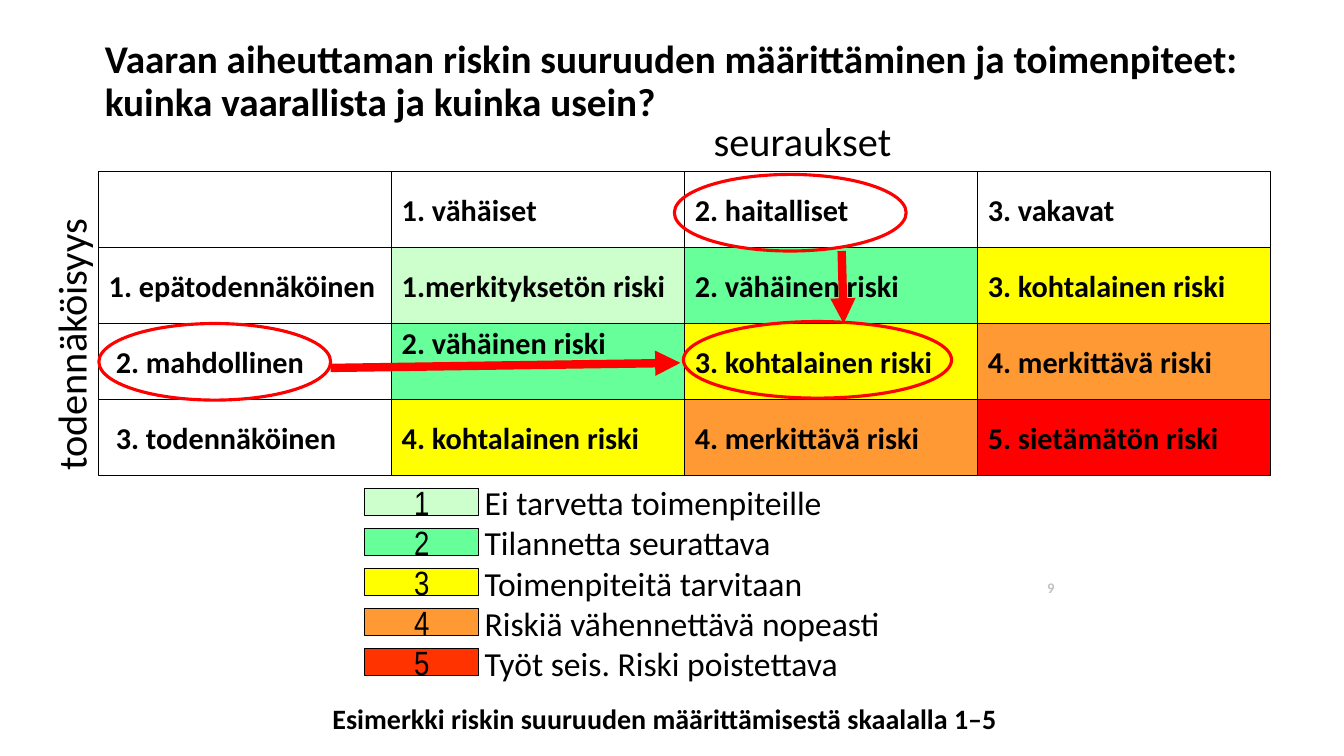
from typing import NamedTuple

from lxml import etree
from pptx import Presentation
from pptx import util as u
from pptx.dml import color
from pptx.enum import shapes, text
from pptx.oxml import ns

BLACK, WHITE, RED = "000000", "FFFFFF", "FF0000"
PALE_GREEN, GREEN, YELLOW, ORANGE = "CCFFCC", "66FF99", "FFFF00", "FF9933"
LEFT, CENTER, RIGHT = text.PP_ALIGN.LEFT, text.PP_ALIGN.CENTER, text.PP_ALIGN.RIGHT
TOP, MIDDLE = text.MSO_ANCHOR.TOP, text.MSO_ANCHOR.MIDDLE


class Box(NamedTuple):
    left: float
    top: float
    width: float
    height: float


class Style(NamedTuple):
    size: float
    bold: bool = False
    align: text.PP_ALIGN = LEFT
    color: str = BLACK
    font: str = "Calibri"


class Cell(NamedTuple):
    label: str
    fill: str = WHITE
    indent: float = 0
    lift: float = 0


class Action(NamedTuple):
    fill: str
    label: str


class Label(NamedTuple):
    box: Box
    lines: list[str]
    style: Style
    rotation: float = 0
    wrap: bool = False
    anchor: text.MSO_ANCHOR = TOP


class Arrow(NamedTuple):
    start: tuple[float, float]
    end: tuple[float, float]


TITLE = ("Vaaran aiheuttaman riskin suuruuden määrittäminen ja toimenpiteet: "
         "kuinka vaarallista ja kuinka usein?")
GRID = Box(70.6, 122.4, 209.3, 54.3)  # first cell
MATRIX = [
    [Cell(""), Cell("1. vähäiset"), Cell("2. haitalliset"), Cell("3. vakavat")],
    [Cell("1. epätodennäköinen"), Cell("1.merkityksetön riski", PALE_GREEN),
     Cell("2. vähäinen riski", GREEN), Cell("3. kohtalainen riski", YELLOW)],
    [Cell("2. mahdollinen", indent=4.9), Cell("2. vähäinen riski", GREEN, lift=26.4),
     Cell("3. kohtalainen riski", YELLOW), Cell("4. merkittävä riski", ORANGE)],
    [Cell("3. todennäköinen", indent=4.9), Cell("4. kohtalainen riski", YELLOW),
     Cell("4. merkittävä riski", ORANGE), Cell("5. sietämätön riski", RED)],
]
KEY = Box(260.6, 348.8, 81.4, 19.4)  # first key box
KEY_PITCH = 28.6
ACTIONS = [
    Action(PALE_GREEN, "Ei tarvetta toimenpiteille"),
    Action(GREEN, "Tilannetta seurattava"),
    Action(YELLOW, "Toimenpiteitä tarvitaan"),
    Action(ORANGE, "Riskiä vähennettävä nopeasti"),
    Action("FF3300", "Työt seis. Riski poistettava"),
]
LABELS = [
    Label(Box(721.4, 408.2, 38.9, 23.8), ["9"],
          Style(10.5, True, RIGHT, "C1C1C6"), wrap=True, anchor=MIDDLE),
    Label(Box(502.6, 79.2, 142.6, 42.5), ["seuraukset"], Style(28.8)),
    Label(Box(-47.5, 223.9, 196.6, 42.5), ["todennäköisyys"], Style(28.8), rotation=270),
    Label(Box(339.1, 340.6, 300.2, 152.6), [action.label for action in ACTIONS], Style(24)),
    Label(Box(228.2, 497.5, 493.2, 31.7),
          ["Esimerkki riskin suuruuden määrittämisestä skaalalla 1–5"],
          Style(20, True, CENTER), wrap=True),
]
RINGS = [Box(481.7, 124.6, 165.6, 54.7), Box(488.2, 229.7, 191.5, 54.7),
         Box(70.6, 231.1, 165.6, 54.7)]
ARROWS = [Arrow((236.2, 262.8), (486, 259.2)), Arrow((601.2, 179.3), (602.6, 231.1))]
CELL_STYLE = Style(21.6, True)
KEY_STYLE = Style(24, align=CENTER, font="Arial Narrow")


def rgb(code: str) -> color.RGBColor:
    return color.RGBColor.from_string(code)


def points(values) -> list[u.Pt]:
    return [u.Pt(value) for value in values]


def write(frame, lines: list[str], style: Style) -> None:
    for index, line in enumerate(lines):
        paragraph = frame.add_paragraph() if index else frame.paragraphs[0]
        paragraph.alignment = style.align
        run = paragraph.add_run()
        run.text = line
        run.font.size = u.Pt(style.size)
        run.font.bold = style.bold
        run.font.name = style.font
        run.font.color.rgb = rgb(style.color)


def add_title(slide) -> None:
    title = slide.shapes.title
    title.left, title.top, title.width, title.height = points((67.7, 6.5, 828, 104.4))
    title.text_frame.vertical_anchor = MIDDLE
    title.text_frame.word_wrap = True
    write(title.text_frame, [TITLE], Style(28, True))
    title.text_frame.paragraphs[0].line_spacing = 0.9


def add_rectangle(slide, box: Box, cell: Cell, style: Style) -> None:
    shape = slide.shapes.add_shape(shapes.MSO_SHAPE.RECTANGLE, *points(box))
    shape.shadow.inherit = False
    shape.fill.solid()
    shape.fill.fore_color.rgb = rgb(cell.fill)
    shape.line.color.rgb = rgb(BLACK)
    shape.line.width = u.Pt(0.75)
    if cell.label:
        frame = shape.text_frame
        frame.word_wrap = True
        frame.vertical_anchor = MIDDLE
        frame.margin_left = u.Pt(7.2 + cell.indent)
        frame.margin_bottom = u.Pt(3.6 + cell.lift)
        write(frame, [cell.label], style)


def add_label(slide, label: Label) -> None:
    shape = slide.shapes.add_textbox(*points(label.box))
    shape.rotation = label.rotation
    shape.text_frame.word_wrap = label.wrap
    shape.text_frame.vertical_anchor = label.anchor
    write(shape.text_frame, label.lines, label.style)


def add_ring(slide, box: Box) -> None:
    shape = slide.shapes.add_shape(shapes.MSO_SHAPE.OVAL, *points(box))
    shape.shadow.inherit = False
    shape.fill.background()
    shape.line.color.rgb = rgb(RED)
    shape.line.width = u.Pt(2.25)


def add_arrow(slide, arrow: Arrow) -> None:
    connector = slide.shapes.add_connector(
        shapes.MSO_CONNECTOR.STRAIGHT, *points(arrow.start + arrow.end))
    connector.line.color.rgb = rgb(RED)
    connector.line.width = u.Pt(6)
    properties = connector.element.spPr
    etree.SubElement(properties.find(ns.qn("a:ln")), ns.qn("a:tailEnd"), type="triangle")
    etree.SubElement(properties, ns.qn("a:effectLst"))


def main() -> None:
    presentation = Presentation()
    presentation.slide_width, presentation.slide_height = points((960, 540))
    slide = presentation.slides.add_slide(presentation.slide_layouts[5])
    add_title(slide)
    for row, cells in enumerate(MATRIX):
        for column, cell in enumerate(cells):
            box = GRID._replace(left=GRID.left + column * GRID.width,
                                top=GRID.top + row * GRID.height)
            add_rectangle(slide, box, cell, CELL_STYLE)
    for label in LABELS:
        add_label(slide, label)
    for index, action in enumerate(ACTIONS):
        box = KEY._replace(top=KEY.top + index * KEY_PITCH)
        add_rectangle(slide, box, Cell(str(index + 1), action.fill), KEY_STYLE)
    for ring in RINGS:
        add_ring(slide, ring)
    for arrow in ARROWS:
        add_arrow(slide, arrow)
    presentation.save("out.pptx")


if __name__ == "__main__":
    main()
